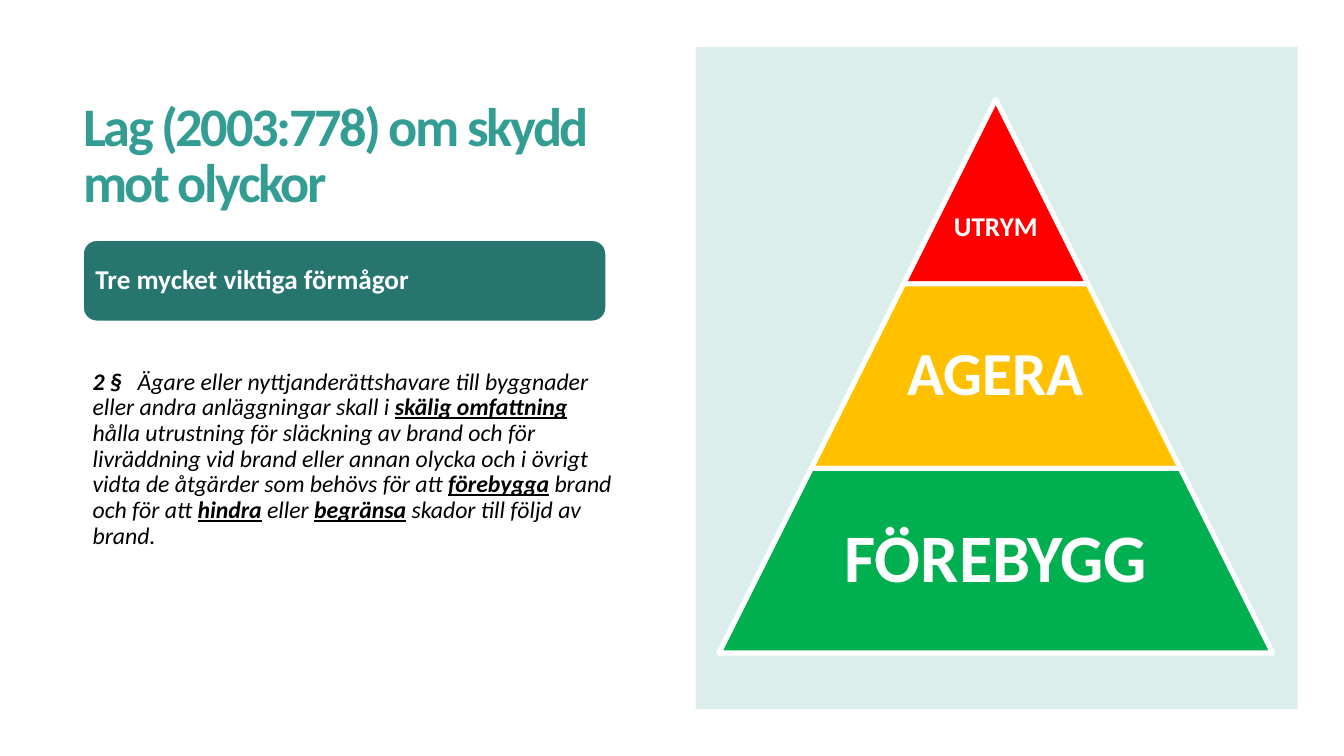
"""Build a slide on the Swedish accident protection act with a three-tier pyramid."""
from dataclasses import dataclass

from lxml.etree import SubElement
from pptx import Presentation
from pptx.dml.color import RGBColor
from pptx.enum.shapes import MSO_SHAPE
from pptx.enum.text import MSO_ANCHOR, MSO_AUTO_SIZE, PP_ALIGN
from pptx.oxml.ns import qn
from pptx.util import Cm, Pt

HEADING = "Lag (2003:778) om skydd mot olyckor"
BANNER = "Tre mycket viktiga förmågor"
LAW = [
    ("2 §", "bold"),
    ("\tÄgare eller nyttjanderättshavare till byggnader eller andra anläggningar skall i ", "plain"),
    ("skälig omfattning", "key"),
    (" hålla utrustning för släckning av brand och för livräddning vid brand eller annan "
     "olycka och i övrigt vidta de åtgärder som behövs för att ", "plain"),
    ("förebygga", "key"),
    (" brand och för att ", "plain"),
    ("hindra", "key"),
    (" eller ", "plain"),
    ("begränsa", "key"),
    (" skador till följd av brand.", "plain"),
]
TIERS = [
    ("UTRYM", "FF0000", 32),
    ("AGERA", "FFC000", 72),
    ("FÖREBYGG", "00B050", 80),
]


@dataclass(frozen=True)
class Theme:
    font: str = "Calibri"
    panel: str = "DCEEEB"
    heading: str = "339D94"
    banner: str = "26766F"
    white: str = "FFFFFF"
    black: str = "000000"
    heading_size: int = 64
    banner_size: int = 32
    law_size: int = 28
    heading_tracking: int = -280


THEME = Theme()
LEFT, COLUMN = 3.45, 21.74
APEX_X, APEX_Y, TIER = 41.38, 4.13, 7.67
UTRYM_DROP = 3.0


def box(left, top, width, height):
    return Cm(left), Cm(top), Cm(width), Cm(height)


def add_block(slide, kind, place, fill, line_width=0):
    block = slide.shapes.add_shape(kind, *place)
    block.shadow.inherit = False
    block.fill.solid()
    block.fill.fore_color.rgb = RGBColor.from_string(fill)
    if line_width:
        block.line.color.rgb = RGBColor.from_string(THEME.white)
        block.line.width = Pt(line_width)
    else:
        block.line.fill.background()
    return block


def set_frame(frame, anchor, margins):
    frame.word_wrap = True
    frame.auto_size = MSO_AUTO_SIZE.NONE
    frame.vertical_anchor = anchor
    (frame.margin_left, frame.margin_top,
     frame.margin_right, frame.margin_bottom) = map(Cm, margins)


def style(run, size, color, bold=True):
    run.font.name = THEME.font
    run.font.size = Pt(size)
    run.font.bold = bold
    run.font.color.rgb = RGBColor.from_string(color)


def write(frame, text, size, color, align, spacing=0.9):
    frame.text = text
    paragraph = frame.paragraphs[0]
    paragraph.alignment = align
    paragraph.line_spacing = spacing
    style(paragraph.runs[0], size, color)
    return paragraph.runs[0]


def add_heading(slide):
    heading = slide.shapes.title
    heading.left, heading.top, heading.width, heading.height = box(LEFT, 3.4, COLUMN, 5.66)
    set_frame(heading.text_frame, MSO_ANCHOR.BOTTOM, (0, 0, 0, 0.2))
    run = write(heading.text_frame, HEADING, THEME.heading_size, THEME.heading,
                PP_ALIGN.LEFT, 0.85)
    run.font._element.set("spc", str(THEME.heading_tracking))


def add_banner(slide):
    banner = add_block(slide, MSO_SHAPE.ROUNDED_RECTANGLE, box(LEFT, 9.98, COLUMN, 3.38),
                       THEME.banner, 2)
    set_frame(banner.text_frame, MSO_ANCHOR.MIDDLE, (0.35, 0.33, 0.35, 0.33))
    write(banner.text_frame, BANNER, THEME.banner_size, THEME.white, PP_ALIGN.LEFT)


def add_law(slide):
    frame = slide.shapes.add_textbox(*box(LEFT, 15.16, 22.5, 10.16)).text_frame
    set_frame(frame, MSO_ANCHOR.TOP, (0.4, 0.2, 0.4, 0.2))
    paragraph = frame.paragraphs[0]
    tabs = SubElement(paragraph._p.get_or_add_pPr(), qn("a:tabLst"))
    SubElement(tabs, qn("a:tab"), pos=str(Cm(1.87)), algn="l")
    paragraph.line_spacing = 0.9
    for words, emphasis in LAW:
        run = paragraph.add_run()
        run.text = words
        style(run, THEME.law_size, THEME.black, emphasis != "plain")
        run.font.italic = True
        run.font.underline = emphasis == "key"


def add_pyramid(slide):
    for level, (label, color, size) in enumerate(TIERS):
        width = TIER * (level + 1)
        top = APEX_Y + TIER * level
        tier = add_block(slide, MSO_SHAPE.TRAPEZOID,
                         box(APEX_X - width / 2, top, width, TIER), color, 6)
        tier.adjustments[0] = 0.5
        drop = 0 if level else UTRYM_DROP
        label_width = max(TIER, width * 0.65)
        caption = slide.shapes.add_textbox(
            *box(APEX_X - label_width / 2, top + drop, label_width, TIER - drop))
        set_frame(caption.text_frame, MSO_ANCHOR.MIDDLE, (0.25,) * 4)
        write(caption.text_frame, label, size, THEME.white, PP_ALIGN.CENTER)


def main():
    deck = Presentation()
    deck.slide_width, deck.slide_height = Cm(55.85), Cm(31.42)
    slide = deck.slides.add_slide(deck.slide_layouts[5])
    add_block(slide, MSO_SHAPE.RECTANGLE, box(28.91, 1.96, 25.02, 27.51), THEME.panel)
    add_heading(slide)
    add_banner(slide)
    add_pyramid(slide)
    add_law(slide)
    deck.save("out.pptx")


if __name__ == "__main__":
    main()
